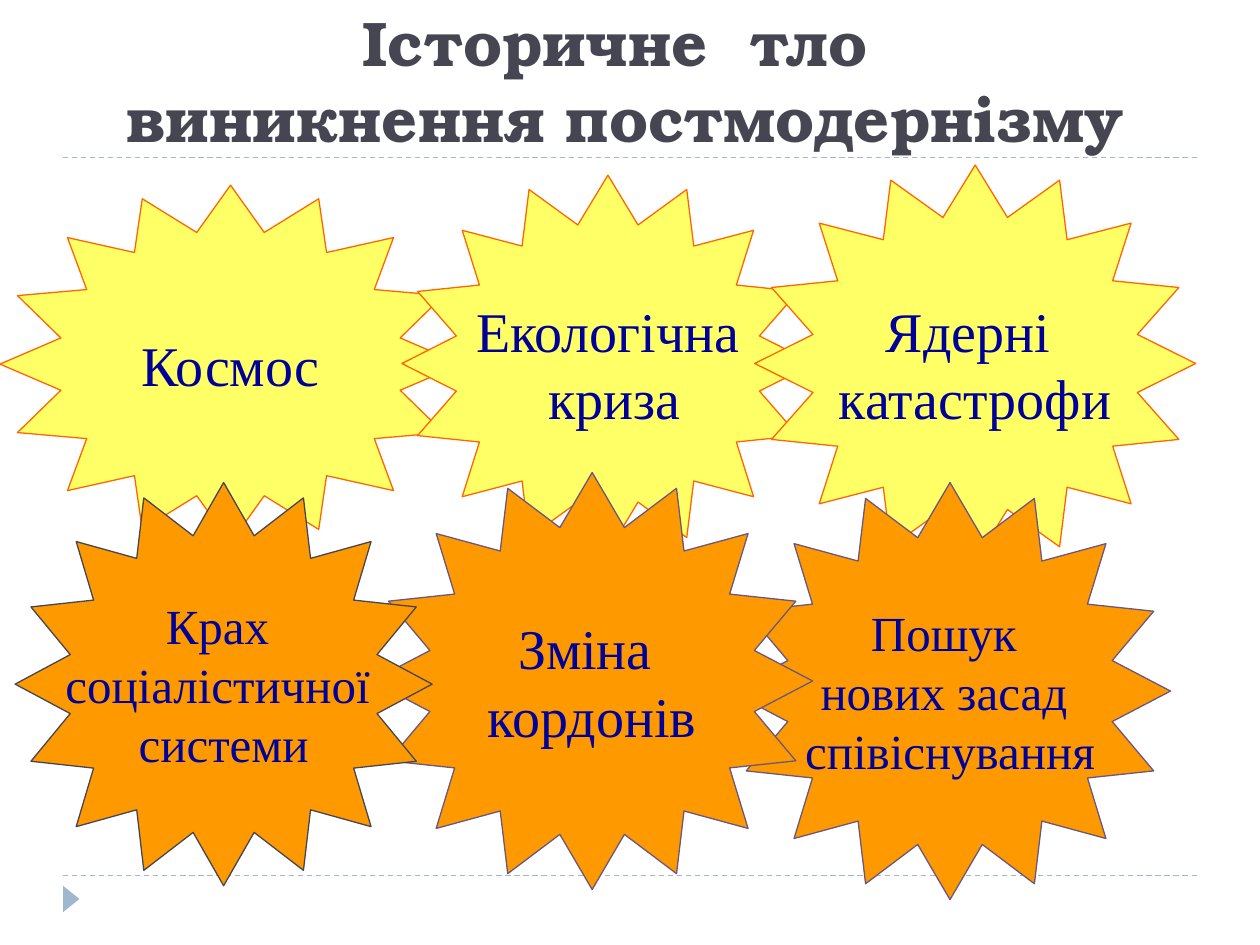
from dataclasses import dataclass

from lxml import etree
from pptx import Presentation
from pptx import util as u
from pptx.dml.color import RGBColor
from pptx.enum import dml, shapes, text
from pptx.oxml.ns import qn

# Grid of 100 columns by 75 rows on a 10 x 7.5 inch slide
COLUMNS, ROWS = 100, 75
CELL = u.Inches(0.1)


@dataclass(frozen=True)
class Theme:
    title_font: str = "TeX Gyre Bonum"
    body_font: str = "Times New Roman"
    title_size: int = 36
    large: int = 32
    medium: int = 28
    thin: float = 0.75
    dark: str = "464653"
    rule: str = "9FB8CD"
    navy: str = "000099"
    yellow: str = "FFFF66"
    red: str = "FF6600"
    orange: str = "FF9900"
    purple: str = "6B5680"


@dataclass(frozen=True)
class Box:
    column: float
    row: float
    columns: float
    rows: float

    def emu(self) -> tuple[int, ...]:
        return tuple(cells(n) for n in (self.column, self.row, self.columns, self.rows))


@dataclass(frozen=True)
class Burst:
    box: Box
    lines: tuple[str, ...]
    fill: str
    outline: str
    size: int


THEME = Theme()

# Back to front
BURSTS = (
    Burst(Box(0, 14.7, 36.6, 28.4), ("Космос",), THEME.yellow, THEME.red, THEME.large),
    Burst(Box(31.9, 13.9, 32.7, 29.9), ("Екологічна", " криза"),
          THEME.yellow, THEME.red, THEME.large),
    Burst(Box(59.9, 13.1, 35, 31.5), ("Ядерні ", "катастрофи"),
          THEME.yellow, THEME.red, THEME.large),
    Burst(Box(57.9, 38.3, 35, 33.1), ("Пошук ", "нових засад ", "співіснування"),
          THEME.orange, THEME.purple, THEME.medium),
    Burst(Box(29.5, 37.5, 35, 33.1), ("Зміна ", "кордонів"),
          THEME.orange, THEME.purple, THEME.large),
    Burst(Box(1.2, 38.3, 33.1, 32), ("Крах ", "соціалістичної ", "системи"),
          THEME.orange, THEME.dark, THEME.medium),
)


def cells(count: float) -> int:
    return round(count * CELL)


def rgb(color: str) -> RGBColor:
    return RGBColor.from_string(color)


def add_run(paragraph, words: str, font: str, size: int, color: str, bold: bool = False) -> None:
    run = paragraph.add_run()
    run.text = words
    run.font.name = font
    run.font.size = u.Pt(size)
    run.font.bold = bold
    run.font.color.rgb = rgb(color)


def draw_rule(slide, row: float) -> None:
    rule = slide.shapes.add_connector(
        shapes.MSO_CONNECTOR.STRAIGHT, cells(5), cells(row), cells(COLUMNS - 5), cells(row))
    rule.line.color.rgb = rgb(THEME.rule)
    rule.line.width = u.Pt(THEME.thin)
    rule.line.dash_style = dml.MSO_LINE.DASH
    etree.SubElement(rule._element.spPr, qn("a:effectLst"))


def draw_page_marker(slide) -> None:
    marker = slide.shapes.add_shape(
        shapes.MSO_SHAPE.ISOSCELES_TRIANGLE, *Box(4.6, 70.7, 2.1, 1.3).emu())
    marker.rotation = 90
    marker.shadow.inherit = False
    marker.fill.solid()
    marker.fill.fore_color.rgb = rgb(THEME.rule)
    marker.line.fill.background()


def write_title(slide, lines: tuple[str, ...]) -> None:
    title = slide.shapes.title
    title.left, title.top, title.width, title.height = Box(7.5, 0, 84.3, 12.8).emu()
    frame = title.text_frame
    frame.auto_size = text.MSO_AUTO_SIZE.NONE
    frame.vertical_anchor = text.MSO_ANCHOR.BOTTOM
    paragraph = frame.paragraphs[0]
    paragraph.alignment = text.PP_ALIGN.CENTER
    for index, line in enumerate(lines):
        if index:
            paragraph.add_line_break()
        add_run(paragraph, line, THEME.title_font, THEME.title_size, THEME.dark, bold=True)


def draw_burst(slide, burst: Burst) -> None:
    star = slide.shapes.add_shape(shapes.MSO_SHAPE.STAR_16_POINT, *burst.box.emu())
    star.adjustments[0] = 0.375
    star.shadow.inherit = False
    star.fill.solid()
    star.fill.fore_color.rgb = rgb(burst.fill)
    star.line.color.rgb = rgb(burst.outline)
    star.line.width = u.Pt(THEME.thin)
    frame = star.text_frame
    frame.word_wrap = False
    frame.vertical_anchor = text.MSO_ANCHOR.MIDDLE
    for index, line in enumerate(burst.lines):
        paragraph = frame.add_paragraph() if index else frame.paragraphs[0]
        paragraph.alignment = text.PP_ALIGN.CENTER
        add_run(paragraph, line, THEME.body_font, burst.size, THEME.navy)


def main() -> None:
    deck = Presentation()
    deck.slide_width, deck.slide_height = COLUMNS * CELL, ROWS * CELL
    slide = deck.slides.add_slide(deck.slide_layouts[5])

    # Frame of the page
    for row in (69.5, 12.5):
        draw_rule(slide, row)
    draw_page_marker(slide)

    # Title and the six causes
    write_title(slide, ("Історичне  тло ", "виникнення постмодернізму"))
    for burst in BURSTS:
        draw_burst(slide, burst)

    deck.save("out.pptx")


if __name__ == "__main__":
    main()
